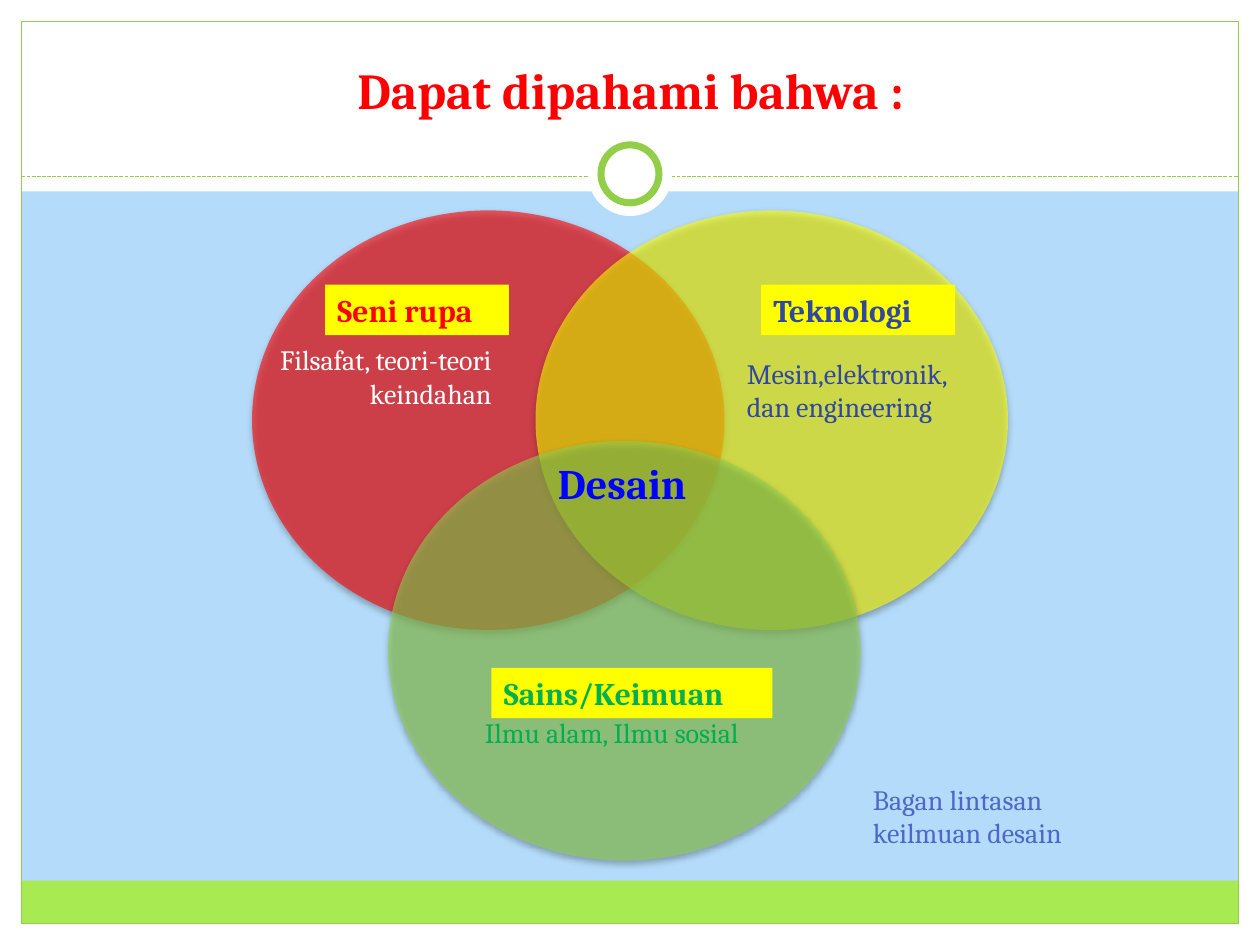
from lxml import etree
from pptx import Presentation
from pptx import util as u
from pptx.dml.color import RGBColor
from pptx.enum import dml, shapes, text
from pptx.oxml import parse_xml
from pptx.oxml.ns import nsdecls, qn

Inches = u.Inches
FONT = "Cambria"
WHITE, RED, YELLOW, GREEN, NAVY = "FFFFFF", "FF0000", "FFFF00", "00B050", "31489F"
BORDER, FOOTER, SKY = "93CE48", "A7EA52", "B4DCFA"


def colour(value):
    """Turn a hex string into a colour."""
    return RGBColor.from_string(value)


def measure(*lengths):
    """Turn numbers into lengths in inches."""
    return [Inches(length) for length in lengths]


def write(frame, words, size, ink, bold=False, align=text.PP_ALIGN.LEFT,
          anchor=text.MSO_ANCHOR.TOP, wrap=True, grow=True):
    """Put one formatted paragraph in a text frame."""
    frame.word_wrap = wrap
    frame.vertical_anchor = anchor
    fit = text.MSO_AUTO_SIZE
    frame.auto_size = fit.SHAPE_TO_FIT_TEXT if grow else fit.NONE
    para = frame.paragraphs[0]
    para.alignment = align
    span = para.add_run()
    span.text = words
    span.font.name, span.font.size, span.font.bold = FONT, u.Pt(size), bold
    span.font.color.rgb = colour(ink)


def add_label(page, box, words, size, ink, fill=None, **style):
    """Add a text box, filled if a colour is given."""
    label = page.shapes.add_textbox(*measure(*box))
    if fill:
        label.fill.solid()
        label.fill.fore_color.rgb = colour(fill)
    write(label.text_frame, words, size, ink, **style)


def add_block(page, kind, box, fill=None, line=None, weight=0.75):
    """Add a flat shape with an optional fill and outline."""
    block = page.shapes.add_shape(kind, *measure(*box))
    block.shadow.inherit = False
    if fill:
        block.fill.solid()
        block.fill.fore_color.rgb = colour(fill)
    else:
        block.fill.background()
    if line:
        block.line.color.rgb = colour(line)
        block.line.width = u.Pt(weight)
    else:
        block.line.fill.background()
    return block


def add_frame(page, box, header):
    """Draw the margins, footer band, border, divider and ring."""
    left, top, width, height = box
    right, bottom = left + width, top + height
    rect, oval = shapes.MSO_SHAPE.RECTANGLE, shapes.MSO_SHAPE.OVAL
    for margin in ((0, bottom, 10, top), (0, 0, 10, header),
                   (0, 0, left, 7.5), (right, 0, left, 7.5)):
        add_block(page, rect, margin, WHITE)
    add_block(page, rect, (left, bottom - 0.34, width, 0.34), FOOTER)
    add_block(page, rect, box, line=BORDER)

    level = header - 0.12
    divider = page.shapes.add_connector(
        shapes.MSO_CONNECTOR.STRAIGHT, *measure(left, level, right, level))
    divider.line.color.rgb = colour(BORDER)
    divider.line.width = u.Pt(0.75)
    divider.line.dash_style = dml.MSO_LINE.SQUARE_DOT
    etree.SubElement(divider.element.spPr, qn("a:effectLst"))

    middle, centre = left + width / 2, level - 0.02
    for size, line in ((0.67, None), (0.46, BORDER)):
        ring = (middle - size / 2, centre - size / 2, size, size)
        add_block(page, oval, ring, WHITE, line, 4)


def add_title(page, box, words):
    """Place the title in front of the frame."""
    title = page.shapes.title
    title.left, title.top, title.width, title.height = measure(*box)
    write(title.text_frame, words, 28.8, RED, bold=True, grow=False,
          align=text.PP_ALIGN.CENTER, anchor=text.MSO_ANCHOR.BOTTOM)
    title.element.getparent().append(title.element)


def add_circle(page, box, fill):
    """Add a translucent oval with a soft shadow below it."""
    circle = add_block(page, shapes.MSO_SHAPE.OVAL, box, fill)
    tint = circle.element.spPr.find(qn("a:solidFill"))[0]
    etree.SubElement(tint, qn("a:alpha"), val="60000")
    circle.element.spPr.find(qn("a:effectLst")).append(parse_xml(
        f'<a:outerShdw {nsdecls("a")} blurRad="{u.Pt(4)}" dist="{u.Pt(2)}" '
        'dir="5400000" rotWithShape="0"><a:srgbClr val="000000">'
        '<a:alpha val="45000"/></a:srgbClr></a:outerShdw>'))


def add_venn(page, box):
    """Draw three overlapping fields with their labels."""
    left, top = box[:2]
    for across, down, fill in ((0, 0, RED), (2.25, 0, YELLOW),
                               (1.08, 1.83, "92D050")):
        add_circle(page, (left + across, top + down, 3.75, 3.33), fill)

    fields = (
        ("Seni rupa", (0.58, 0.59, 1.46, 0.4), RED, False,
         "Filsafat, teori-teori keindahan", (0.12, 1, 1.88, 0.91), WHITE,
         text.PP_ALIGN.RIGHT),
        ("Teknologi", (4.04, 0.59, 1.54, 0.4), NAVY, True,
         "Mesin,elektronik, dan engineering", (3.83, 1.11, 2, 0.64), NAVY,
         text.PP_ALIGN.LEFT),
        ("Sains/Keimuan", (1.9, 3.63, 2.23, 0.4), GREEN, True,
         "Ilmu alam, Ilmu sosial", (1.75, 3.96, 2.61, 0.37), GREEN,
         text.PP_ALIGN.LEFT),
    )
    for name, name_box, ink, wrap, detail, detail_box, detail_ink, align in fields:
        x, y, *size = name_box
        add_label(page, (left + x, top + y, *size), name, 18, ink, YELLOW,
                  bold=True, wrap=wrap)
        x, y, *size = detail_box
        add_label(page, (left + x, top + y, *size), detail, 16, detail_ink,
                  align=align)
    add_label(page, (left + 2.33, top + 1.91, 1.4, 0.5), "Desain", 24, "0000FF",
              bold=True, wrap=False)


def main():
    """Build and save the slide."""
    deck = Presentation()
    deck.slide_width, deck.slide_height = measure(10, 7.5)
    page = deck.slides.add_slide(deck.slide_layouts[5])
    page.background.fill.solid()
    page.background.fill.fore_color.rgb = colour(SKY)
    add_frame(page, (0.17, 0.17, 9.66, 7.16), 1.52)
    add_title(page, (0.17, 0.42, 9.67, 0.58), "Dapat dipahami bahwa :")
    add_venn(page, (2, 1.67, 6, 5.16))
    add_label(page, (6.83, 6.08, 2.14, 0.71), "Bagan lintasan keilmuan desain",
              16, "4E67C8", anchor=text.MSO_ANCHOR.BOTTOM, grow=False)
    deck.save("out.pptx")


if __name__ == "__main__":
    main()
